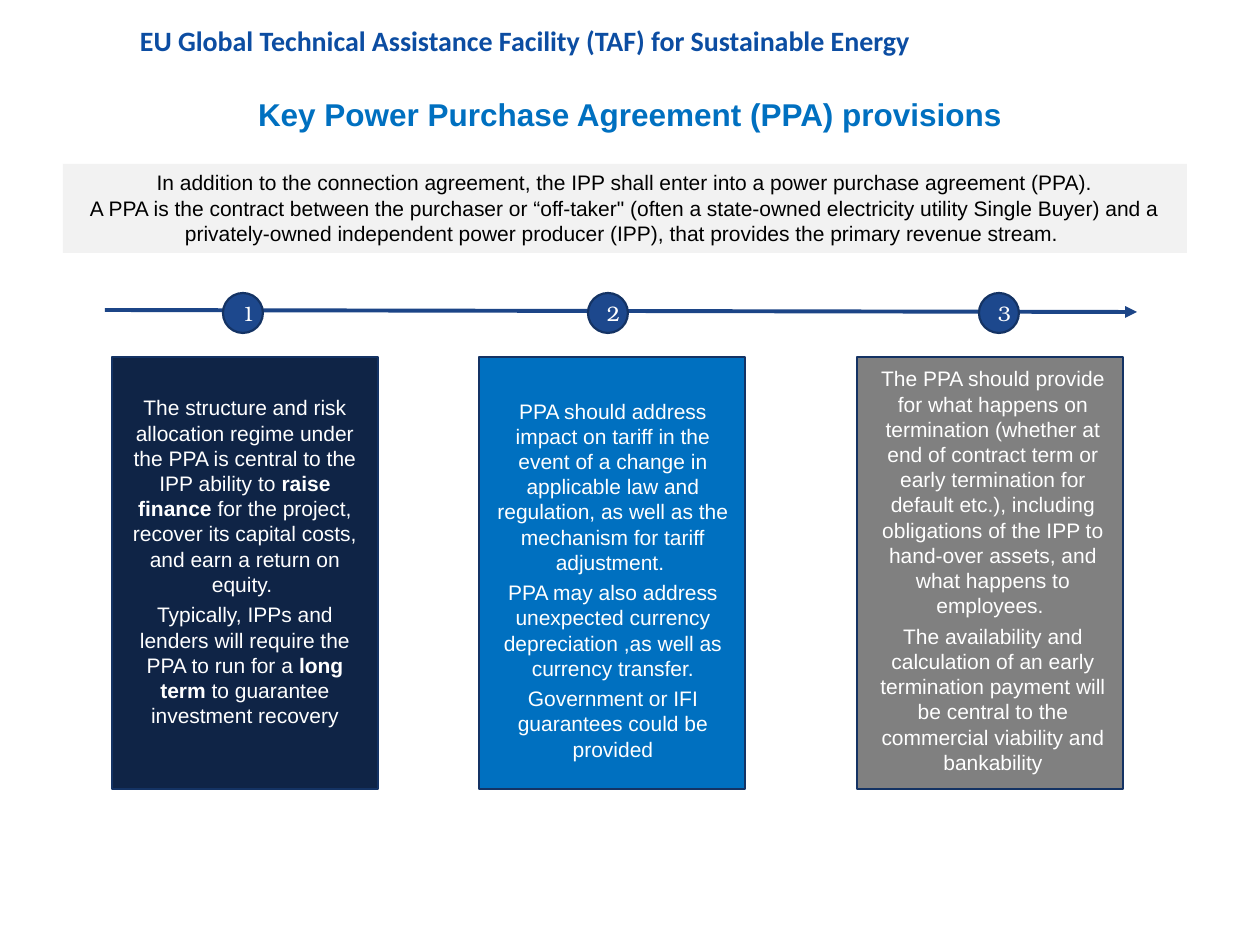
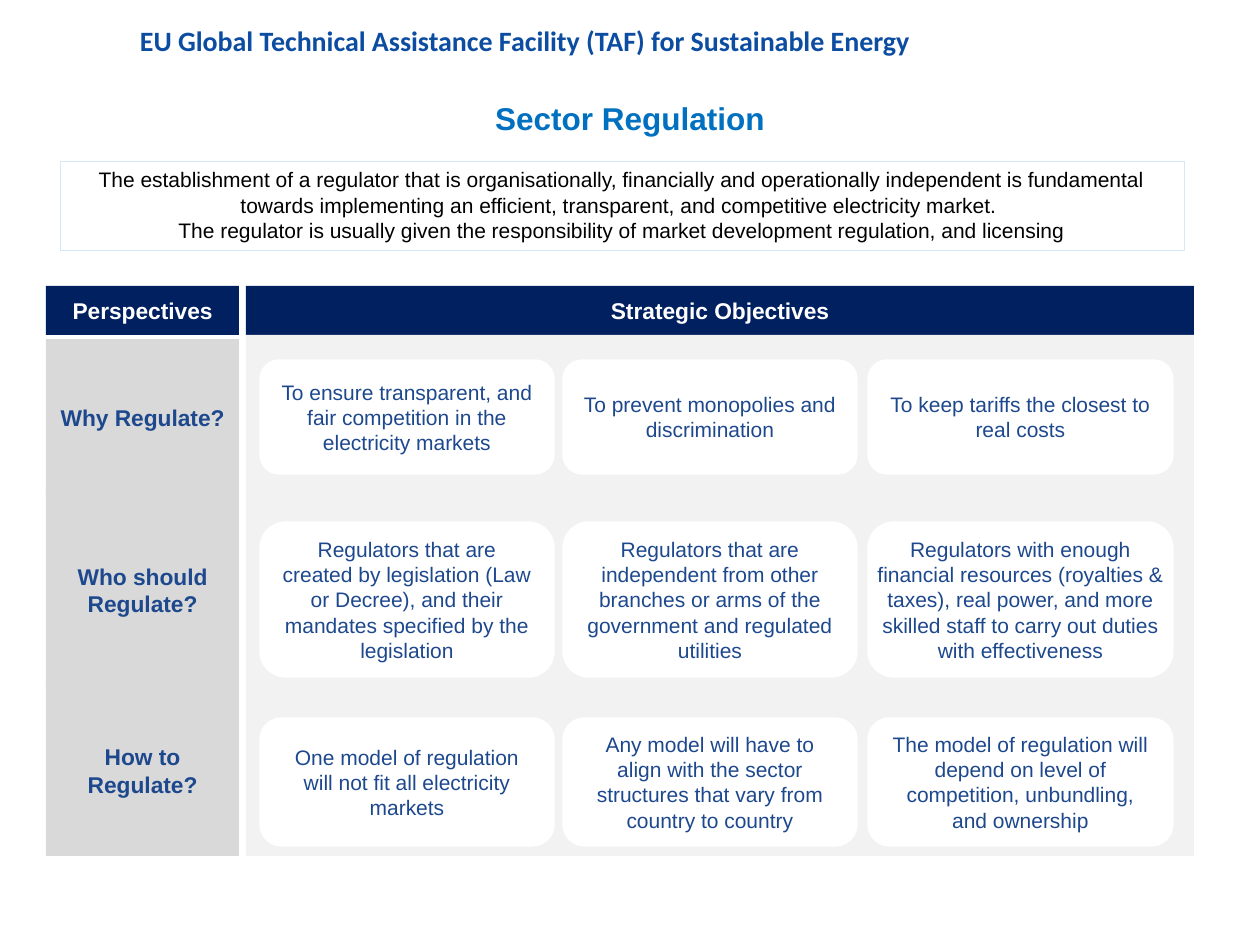
from dataclasses import dataclass

from lxml.etree import SubElement
from pptx import Presentation
from pptx.dml.color import RGBColor
from pptx.enum.shapes import MSO_CONNECTOR, MSO_SHAPE
from pptx.enum.text import MSO_ANCHOR, MSO_AUTO_SIZE, PP_ALIGN
from pptx.oxml.ns import qn
from pptx.util import Emu, Pt


@dataclass(frozen=True)
class Theme:
    # Colours
    head: str = "0C4DA2"
    blue: str = "0070C0"
    navy: str = "002060"
    dark: str = "0F2446"
    edge: str = "143364"
    ink: str = "1D488D"
    arrow: str = "1C4587"
    grey: str = "808080"
    mid: str = "D9D9D9"
    pale: str = "F2F2F2"
    ice: str = "D1E9FB"
    white: str = "FFFFFF"
    black: str = "000000"
    # Fonts and type sizes
    sans: str = "Arial"
    brand: str = "Calibri"
    serif: str = "TeX Gyre Bonum"
    big: int = 18
    top: int = 16
    label: int = 13
    body: int = 12


T = Theme()
PAD = (13, 6, 13, 6)  # left, top, right, bottom

CARDS = [
    (112, T.dark, (13, 38, 13, 6), [
        "The structure and risk allocation regime under the PPA is central to "
        "the IPP ability to *raise finance *for the project, recover its capital "
        "costs, and earn a return on equity. ",
        "Typically, IPPs and lenders will require the PPA to run for a "
        "*long term *to guarantee investment recovery"]),
    (479, T.blue, (16, 41, 14, 6), [
        "PPA should address impact on tariff in the event of a change in "
        "applicable law and regulation, as well as the mechanism for tariff "
        "adjustment. ",
        "PPA may also address unexpected currency depreciation ,as well as "
        "currency transfer.",
        "Government or IFI guarantees could be provided"]),
    (857, T.grey, (16, 9, 10, 6), [
        "The PPA should provide for what happens on termination (whether at end "
        "of contract term or early termination for default etc.), including "
        "obligations of the IPP to hand-over assets, and what happens to "
        "employees. ",
        "The availability and calculation of an early termination payment will "
        "be central to the commercial viability and bankability"]),
]

# Row label, label top and height, box top and height, box texts
ROWS = [
    ("Why Regulate?", 339, 157, 360, 114, [
        "To ensure transparent, and fair competition in the electricity markets",
        "To prevent monopolies and discrimination",
        "To keep tariffs the closest to real costs"]),
    ("Who should Regulate?", 493, 194, 522, 155, [
        "Regulators that are created by legislation (Law or Decree), and their "
        "mandates specified by the legislation",
        "Regulators that are independent from other branches or arms of the "
        "government and regulated utilities",
        "Regulators with enough financial resources (royalties & taxes), real "
        "power, and more skilled staff to carry out duties with effectiveness"]),
    ("How to Regulate?", 685, 171, 718, 128, [
        "One model of regulation will not fit all electricity markets",
        "Any model will have to align with the sector structures that vary from "
        "country to country",
        "The model of regulation will depend on level of competition, "
        "unbundling, and ownership"]),
]
COLS = [(260, 294), (563, 294), (868, 305)]


def px(n):
    return Emu(round(n * 914400 / 126))


def rgb(code):
    return RGBColor.from_string(code)


def put(obj, **vals):
    for key, val in vals.items():
        setattr(obj, key, val)


def write(shape, paras, color, size=T.body, font=T.sans, bold=False,
          align=PP_ALIGN.CENTER, anchor=MSO_ANCHOR.TOP, pad=PAD, after=0):
    """Fill a shape with paragraphs; *stars* enclose bold words."""
    frame = shape.text_frame
    left, top, right, bottom = map(px, pad)
    put(frame, word_wrap=True, auto_size=MSO_AUTO_SIZE.NONE,
        vertical_anchor=anchor, margin_left=left, margin_top=top,
        margin_right=right, margin_bottom=bottom)
    for i, text in enumerate(paras):
        para = frame.add_paragraph() if i else frame.paragraphs[0]
        put(para, alignment=align, space_after=Pt(after))
        for j, part in enumerate(text.split("*")):
            run = para.add_run()
            run.text = part
            put(run.font, name=font, size=Pt(size), bold=bold or j % 2 == 1)
            run.font.color.rgb = rgb(color)


def box(slide, area, fill=None, line=None, width=1.25, kind=MSO_SHAPE.RECTANGLE):
    shape = slide.shapes.add_shape(kind, *map(px, area))
    shape.shadow.inherit = False
    for part, color in ((shape.fill, fill), (shape.line.fill, line)):
        if color:
            part.solid()
            part.fore_color.rgb = rgb(color)
        else:
            part.background()
    if line:
        shape.line.width = Pt(width)
    return shape


def label(slide, area, text, fill, color, pad=PAD):
    write(box(slide, area, fill), [text], color, size=T.label, bold=True,
          anchor=MSO_ANCHOR.MIDDLE, pad=pad)


def arrow(slide, ends):
    line = slide.shapes.add_connector(MSO_CONNECTOR.STRAIGHT, *map(px, ends))
    line.line.color.rgb = rgb(T.arrow)
    line.line.width = Pt(2.25)
    props = line.line._get_or_add_ln()
    SubElement(props, qn("a:tailEnd"), type="triangle")
    SubElement(props.getparent(), qn("a:effectLst"))


def start(deck, title, top):
    """Add a slide with the shared header and its title."""
    slide = deck.slides.add_slide(deck.slide_layouts[5])
    head = slide.shapes.add_textbox(*map(px, (127, 18, 1091, 43)))
    write(head, ["EU Global Technical Assistance Facility (TAF) for Sustainable Energy"],
          T.head, size=T.top, font=T.brand, bold=True, align=PP_ALIGN.LEFT)
    name = slide.shapes.title
    put(name, left=px(0), top=px(top), width=px(1260), height=px(51))
    write(name, [title], T.blue, size=T.big, bold=True)
    return slide


def terms(deck):
    slide = start(deck, "Key Power Purchase Agreement (PPA) provisions", 89)
    write(box(slide, (63, 164, 1124, 89), T.pale), [
        "In addition to the connection agreement, the IPP shall enter into a "
        "power purchase agreement (PPA).",
        "A PPA is the contract between the purchaser or “off-taker\" (often a "
        "state-owned electricity utility Single Buyer) and a privately-owned "
        "independent power producer (IPP), that provides the primary revenue "
        "stream. "], T.black)

    # Timeline with numbered dots
    arrow(slide, (105, 310, 1137, 312))
    for num, left in enumerate((223, 588, 979), 1):
        dot = box(slide, (left, 293, 40, 40), T.ink, T.edge, kind=MSO_SHAPE.OVAL)
        write(dot, [str(num)], T.white, font=T.serif, anchor=MSO_ANCHOR.MIDDLE)

    # Cards below the dots
    for left, fill, pad, paras in CARDS:
        card = box(slide, (left, 357, 266, 432), fill, T.edge)
        write(card, paras, T.white, pad=pad, after=3)


def rules(deck):
    slide = start(deck, "Sector Regulation", 93)
    write(box(slide, (60, 161, 1124, 89), line=T.ice, width=0.25), [
        "The establishment of a regulator that is organisationally, financially "
        "and operationally independent is fundamental towards implementing an "
        "efficient, transparent, and competitive electricity market. ",
        "The regulator is usually given the responsibility of market development "
        "regulation, and licensing"], T.black)

    # Column heads and the panel behind the boxes
    label(slide, (46, 286, 193, 49), "Perspectives", T.navy, T.white)
    label(slide, (246, 286, 948, 49), "Strategic Objectives", T.navy, T.white)
    box(slide, (246, 335, 948, 521), T.pale)

    # One label and three boxes in each row
    for name, top, high, y, tall, texts in ROWS:
        label(slide, (46, top, 193, high), name, T.mid, T.ink)
        for (left, wide), text in zip(COLS, texts):
            cell = box(slide, (left, y, wide, tall), T.white, T.white, 0.75,
                       MSO_SHAPE.ROUNDED_RECTANGLE)
            tight = text.startswith("Regulators with")
            write(cell, [text], T.ink, anchor=MSO_ANCHOR.MIDDLE,
                  pad=(0, 6, 0, 6) if tight else PAD)


def main():
    deck = Presentation()
    put(deck, slide_width=px(1260), slide_height=px(945))
    terms(deck)
    rules(deck)
    deck.save("out.pptx")


if __name__ == "__main__":
    main()
